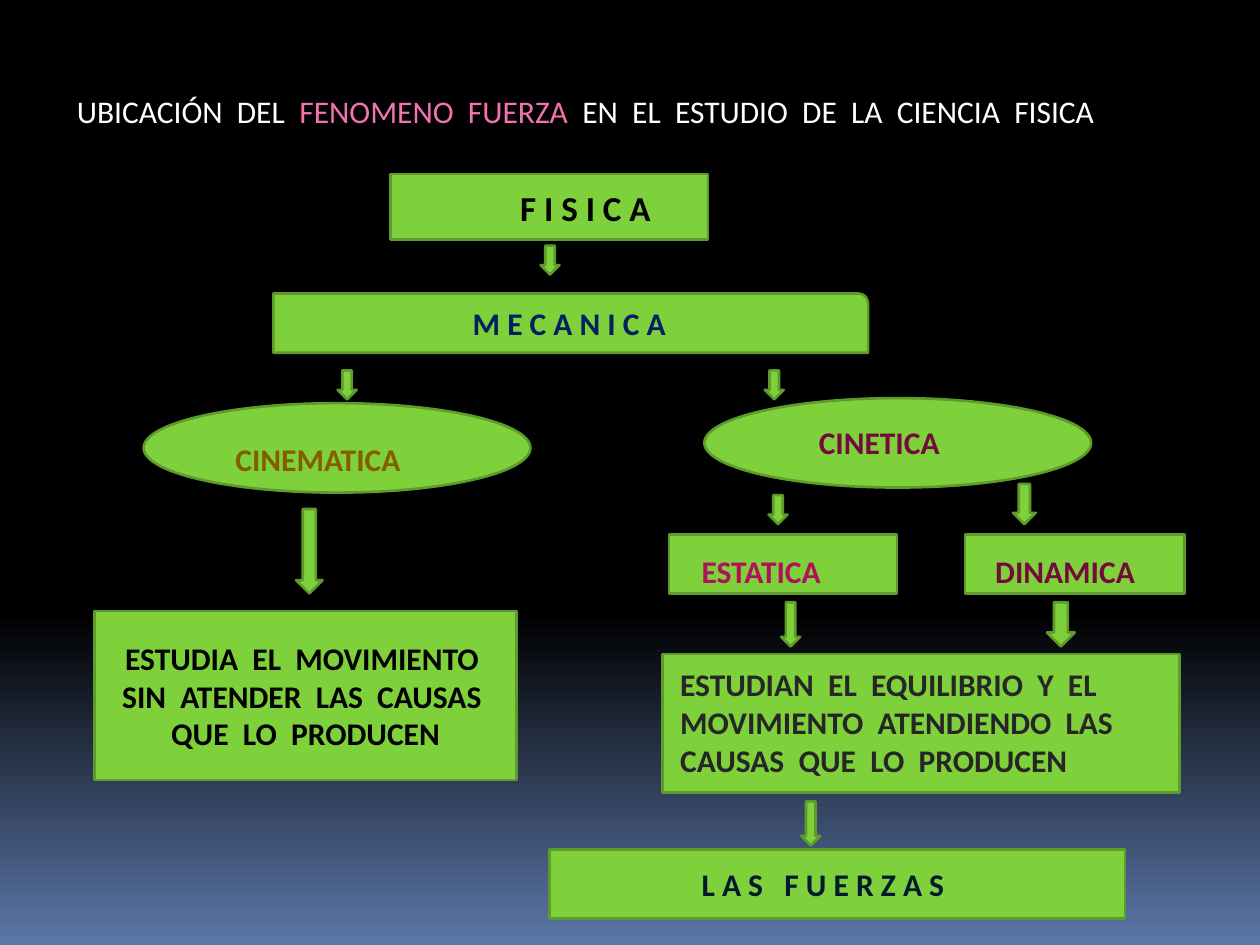
from pptx import Presentation
from pptx.dml.color import RGBColor
from pptx.enum.shapes import MSO_SHAPE
from pptx.enum.text import MSO_ANCHOR, MSO_AUTO_SIZE, PP_ALIGN
from pptx.util import Inches, Pt

GREEN, EDGE = "7FD13B", "5E9B2C"
WHITE, BLACK, PINK, WINE = "FFFFFF", "000000", "F273AF", "750B3D"

NODES = [
    (MSO_SHAPE.RECTANGLE, (3.1, 1.38, 2.52, 0.52)),
    (MSO_SHAPE.OVAL, (1.14, 3.2, 3.07, 0.71)),
    (MSO_SHAPE.OVAL, (5.59, 3.16, 3.07, 0.71)),
    (MSO_SHAPE.RECTANGLE, (5.31, 4.24, 1.81, 0.47)),
    (MSO_SHAPE.RECTANGLE, (7.66, 4.24, 1.74, 0.47)),
    (MSO_SHAPE.RECTANGLE, (5.26, 5.19, 4.1, 1.1)),
    (MSO_SHAPE.RECTANGLE, (4.36, 6.74, 4.57, 0.55)),
]
FILLED = [
    (MSO_SHAPE.ROUND_1_RECTANGLE, (2.17, 2.33, 4.72, 0.47),
     "M E C A N I C A", "002060"),
    (MSO_SHAPE.RECTANGLE, (0.75, 4.85, 3.35, 1.34),
     "ESTUDIA  EL  MOVIMIENTO  SIN  ATENDER  LAS  CAUSAS  QUE  LO  PRODUCEN",
     BLACK),
]
LABELS = [
    ((4.03, 1.43, 2.4, 0.44), "F I S I C A", BLACK, 20),
    ((1.77, 3.44, 1.81, 0.4), "CINEMATICA", "835E01", 18),
    ((6.4, 3.31, 1.81, 0.4), "CINETICA", WINE, 18),
    ((5.47, 4.33, 1.42, 0.4), "ESTATICA", "B0105C", 18),
    ((7.8, 4.33, 1.58, 0.4), "DINAMICA", WINE, 18),
    ((5.3, 5.23, 4.1, 1.01),
     "ESTUDIAN  EL  EQUILIBRIO  Y  EL  MOVIMIENTO  ATENDIENDO  LAS  CAUSAS  "
     "QUE  LO  PRODUCEN", "262626", 18),
    ((5.47, 6.82, 2.92, 0.4), "L A S   F U E R Z A S", "00192F", 18),
]
ARROWS = [
    (4.29, 1.95, 0.15, 0.23),
    (2.68, 2.94, 0.15, 0.23),
    (6.07, 2.94, 0.15, 0.23),
    (2.35, 4.04, 0.21, 0.67),
    (6.1, 3.93, 0.15, 0.23),
    (8.04, 3.84, 0.18, 0.32),
    (6.2, 4.78, 0.15, 0.35),
    (8.31, 4.78, 0.22, 0.35),
    (6.36, 6.36, 0.15, 0.35),
]


def color(code):
    """Turn a hex string into a colour."""
    return RGBColor.from_string(code)


def inches(at):
    """Turn a box of numbers into lengths."""
    return [Inches(n) for n in at]


def write(shape, *runs, size=18, bold=True, align=PP_ALIGN.LEFT,
          anchor=MSO_ANCHOR.TOP, wrap=True):
    """Write runs of text and colour into a shape."""
    frame = shape.text_frame
    frame.word_wrap = wrap
    frame.auto_size = MSO_AUTO_SIZE.NONE
    frame.vertical_anchor = anchor
    para = frame.paragraphs[0]
    para.alignment = align
    for text, code in runs:
        run = para.add_run()
        run.text = text
        font = run.font
        font.name, font.size, font.bold = "Calibri", Pt(size), bold
        font.color.rgb = color(code)


def paint(slide):
    """Fade the background from black to blue."""
    fill = slide.background.fill
    fill.gradient()
    fill.gradient_angle = 270
    for stop, (place, code) in zip(fill.gradient_stops,
                                   [(0.65, BLACK), (1, "5B77A8")]):
        stop.position = place
        stop.color.rgb = color(code)


def title(slide):
    """Place and format the title."""
    head = slide.shapes.title
    head.left, head.top, head.width, head.height = inches((0.51, 0.68, 8.91, 0.4))
    write(head, ("UBICACIÓN  DEL  ", WHITE), ("FENOMENO  FUERZA", PINK),
          ("  EN  EL  ESTUDIO  DE  LA  CIENCIA  FISICA", WHITE),
          bold=False, wrap=False)


def node(slide, kind, at):
    """Add a green shape with a darker edge."""
    shape = slide.shapes.add_shape(kind, *inches(at))
    shape.shadow.inherit = False
    shape.fill.solid()
    shape.fill.fore_color.rgb = color(GREEN)
    shape.line.color.rgb = color(EDGE)
    shape.line.width = Pt(1.5)
    return shape


def label(slide, at, text, code, size):
    """Add a bold text box."""
    write(slide.shapes.add_textbox(*inches(at)), (text, code), size=size)


def main():
    """Build and save the slide."""
    deck = Presentation()
    deck.slide_width, deck.slide_height = Inches(10), Inches(7.5)
    slide = deck.slides.add_slide(deck.slide_layouts[5])
    paint(slide)
    title(slide)
    for kind, at in NODES:
        node(slide, kind, at)
    for kind, at, text, code in FILLED:
        write(node(slide, kind, at), (text, code),
              align=PP_ALIGN.CENTER, anchor=MSO_ANCHOR.MIDDLE)
    for item in LABELS:
        label(slide, *item)
    for at in ARROWS:
        node(slide, MSO_SHAPE.DOWN_ARROW, at)
    deck.save("out.pptx")


if __name__ == "__main__":
    main()
